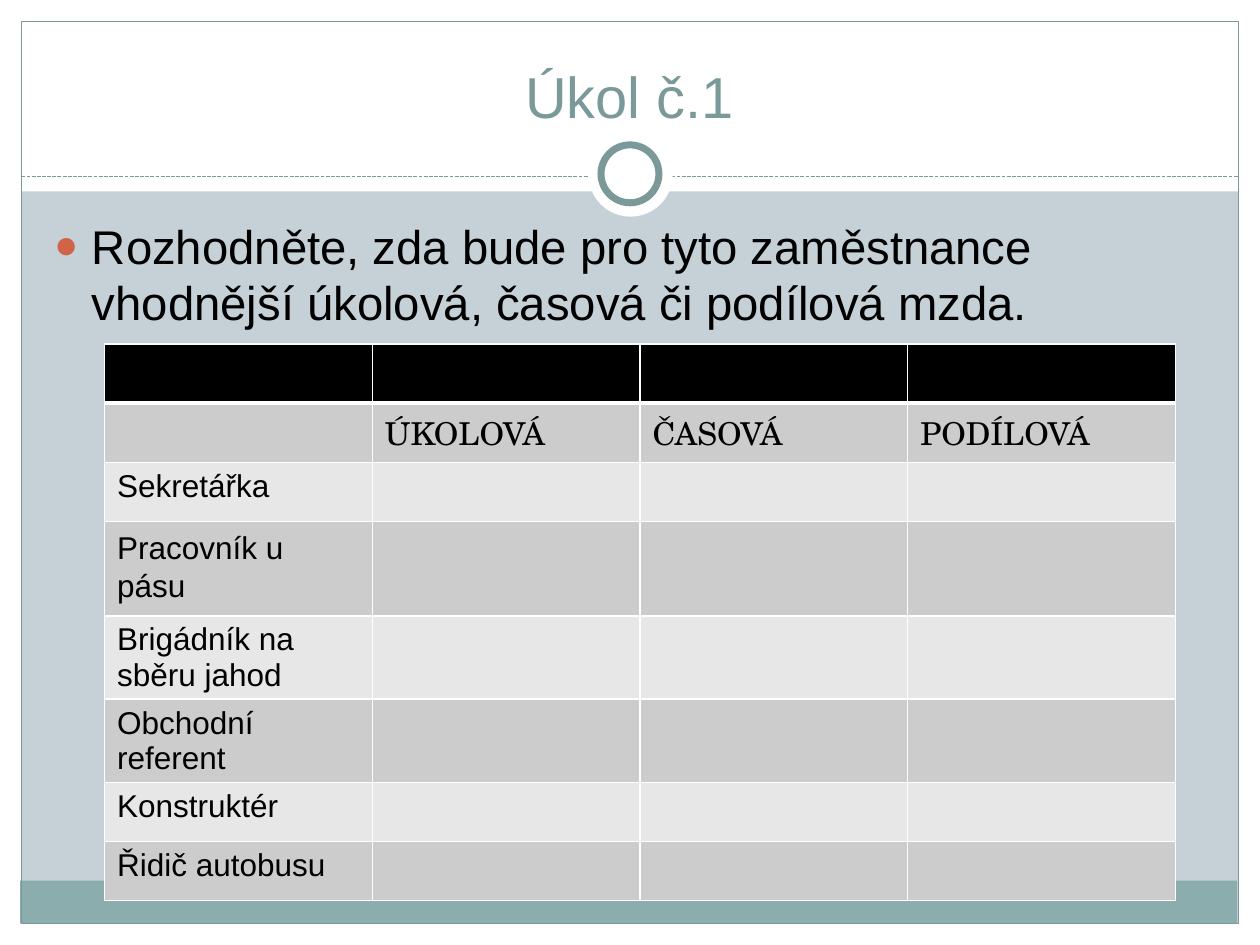
from lxml import etree
from pptx import Presentation
from pptx.dml.color import RGBColor
from pptx.enum.dml import MSO_LINE
from pptx.enum.shapes import MSO_CONNECTOR, MSO_SHAPE
from pptx.enum.text import MSO_ANCHOR, MSO_AUTO_SIZE, PP_ALIGN
from pptx.oxml.ns import qn
from pptx.util import Inches, Pt

RECT, OVAL = MSO_SHAPE.RECTANGLE, MSO_SHAPE.OVAL
STRAIGHT, DASH = MSO_CONNECTOR.STRAIGHT, MSO_LINE.SQUARE_DOT
TOP, BOTTOM = MSO_ANCHOR.TOP, MSO_ANCHOR.BOTTOM
LEFT, CENTER = PP_ALIGN.LEFT, PP_ALIGN.CENTER
NO_FIT = MSO_AUTO_SIZE.NONE

WHITE = RGBColor(0xFF, 0xFF, 0xFF)
BLACK = RGBColor(0, 0, 0)
MIST = RGBColor(0xC5, 0xD1, 0xD7)
TEAL = RGBColor(0x8C, 0xAD, 0xAE)
SLATE = RGBColor(0x7C, 0x99, 0x9A)
RUST = RGBColor(0xD1, 0x63, 0x49)
DARK = RGBColor(0xCC, 0xCC, 0xCC)
LIGHT = RGBColor(0xE7, 0xE7, 0xE7)

SANS, SERIF = "Arial", "TeX Gyre Schola"

WAGES = ["", "ÚKOLOVÁ", "ČASOVÁ", "PODÍLOVÁ"]
JOBS = ["Sekretářka", "Pracovník u pásu", "Brigádník na sběru jahod",
        "Obchodní referent", "Konstruktér", "Řidič autobusu"]


def add(parent, tag, **attrs):
    return etree.SubElement(parent, qn(tag), attrs)


class Page:
    def __init__(self, slide):
        self.slide = slide
        self.shapes = slide.shapes
        slide.background.fill.solid()
        slide.background.fill.fore_color.rgb = MIST

    def shape(self, kind, box, fill=None, line=None, width=0.75):
        shape = self.shapes.add_shape(kind, *map(Inches, box))
        shape.shadow.inherit = False
        if fill is None:
            shape.fill.background()
        else:
            shape.fill.solid()
            shape.fill.fore_color.rgb = fill
        if line is None:
            shape.line.fill.background()
        else:
            shape.line.color.rgb = line
            shape.line.width = Pt(width)

    def rule(self, left, right, top):
        ends = map(Inches, (left, top, right, top))
        rule = self.shapes.add_connector(STRAIGHT, *ends)
        rule.line.color.rgb = SLATE
        rule.line.width = Pt(0.75)
        rule.line.dash_style = DASH
        add(rule.element.spPr, "a:effectLst")

    def font(self, para, size, color, name=SANS):
        para.font.size = Pt(size)
        para.font.name = name
        para.font.color.rgb = color

    def holder(self, shape, box, text, anchor, align, size, color):
        shape.left, shape.top, shape.width, shape.height = map(Inches, box)
        self.shapes.element.append(shape.element)
        frame = shape.text_frame
        frame.text = text
        frame.auto_size = NO_FIT
        frame.word_wrap = True
        frame.vertical_anchor = anchor
        para = frame.paragraphs[0]
        para.alignment = align
        self.font(para, size, color)
        return para

    def bullet(self, para):
        para.space_before = Pt(5.4)
        props = para._p.get_or_add_pPr()
        props.set("marL", str(Inches(0.3)))
        props.set("indent", str(Inches(-0.3)))
        tint = etree.Element(qn("a:buClr"))
        add(tint, "a:srgbClr", val=str(RUST))
        size = etree.Element(qn("a:buSzPct"), val="85000")
        face = etree.Element(qn("a:buFont"), typeface=SANS)
        mark = etree.Element(qn("a:buChar"), char="●")
        spot = props.index(props.find(qn("a:spcBef"))) + 1
        props[spot:spot] = [tint, size, face, mark]

    def border(self, cell, bottom):
        props = cell._tc.get_or_add_tcPr()
        for side in "LRTB":
            width = bottom if side == "B" else 1
            line = add(props, f"a:ln{side}", w=str(Pt(width)))
            add(add(line, "a:solidFill"), "a:srgbClr", val=str(WHITE))

    def table(self, box, rows, height):
        cols = len(rows[0])
        grid = self.shapes.add_table(len(rows), cols, *map(Inches, box)).table
        for r, row in enumerate(rows):
            grid.rows[r].height = Inches(height)
            for c, text in enumerate(row):
                cell = grid.cell(r, c)
                self.border(cell, 3 if r == 0 else 1)
                cell.fill.solid()
                fill = BLACK if r == 0 else DARK if r % 2 else LIGHT
                cell.fill.fore_color.rgb = fill
                cell.text = text
                face = SERIF if r == 1 else SANS
                self.font(cell.text_frame.paragraphs[0], 18, BLACK, face)
        return grid


def main():
    deck = Presentation()
    deck.slide_width, deck.slide_height = Inches(10), Inches(7.5)
    page = Page(deck.slides.add_slide(deck.slide_layouts[1]))
    title, body = page.slide.placeholders

    for box in [(0, 7.33, 10, 0.17), (0, 0, 10, 1.52),
                (0, 0, 0.17, 7.5), (9.83, 0, 0.17, 7.5)]:
        page.shape(RECT, box, WHITE)
    page.shape(RECT, (0.16, 6.99, 9.66, 0.34), TEAL)
    page.shape(RECT, (0.17, 0.17, 9.66, 7.16), line=SLATE)
    page.rule(0.17, 9.83, 1.4)
    page.shape(OVAL, (4.67, 1.05, 0.67, 0.67), WHITE)
    page.shape(OVAL, (4.77, 1.15, 0.46, 0.46), WHITE, SLATE, 4)

    page.holder(title, (0.33, 0.25, 9.33, 0.83), "Úkol č.1",
                BOTTOM, CENTER, 33, SLATE)
    task = page.holder(
        body, (0.33, 1.67, 9.3, 5),
        "Rozhodněte, zda bude pro tyto zaměstnance "
        "vhodnější úkolová, časová či podílová mzda.",
        TOP, LEFT, 27, BLACK)
    page.bullet(task)

    rows = [[""] * 4, WAGES] + [[job, "", "", ""] for job in JOBS]
    grid = page.table((0.83, 2.73, 8.5, 3.76), rows, 0.47)
    belt = grid.cell(3, 0).text_frame.paragraphs[0]
    belt.line_spacing = 1.08
    belt.space_before = Pt(3)
    grid.rows[3].height = Inches(0.75)

    deck.save("out.pptx")


if __name__ == "__main__":
    main()
